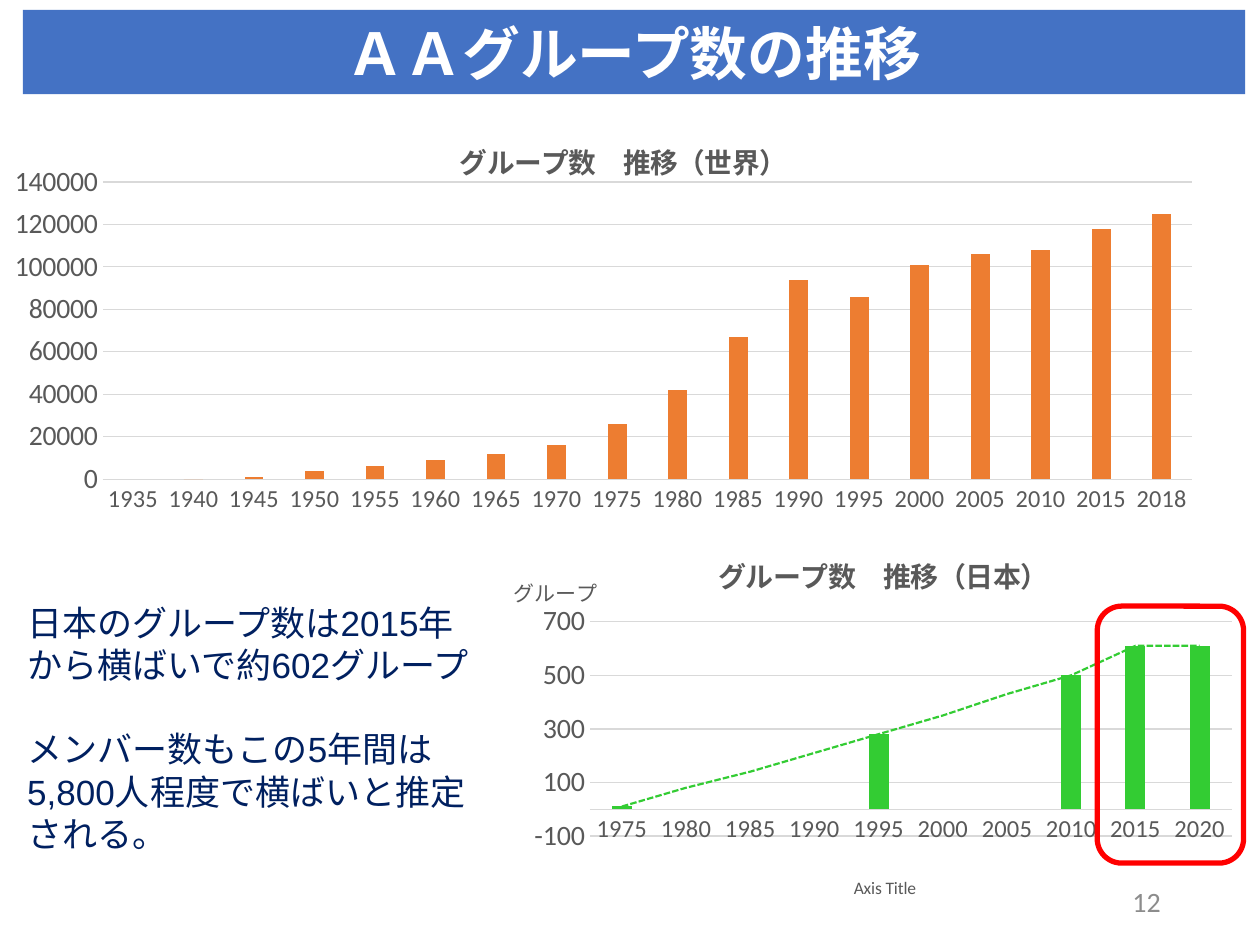
from dataclasses import dataclass

from lxml.etree import SubElement
from pptx import Presentation
from pptx.chart.data import CategoryChartData
from pptx.dml.color import RGBColor
from pptx.enum.chart import XL_CHART_TYPE as ChartType, XL_MARKER_STYLE as Marker, XL_TICK_MARK as Tick
from pptx.enum.dml import MSO_LINE as Dash
from pptx.enum.shapes import MSO_SHAPE as Shape
from pptx.enum.text import MSO_ANCHOR as Anchor, PP_ALIGN as Align
from pptx.oxml import parse_xml
from pptx.oxml.ns import nsdecls, qn
from pptx.util import Cm, Pt


@dataclass(frozen=True)
class Theme:
    latin: str = "Arial"
    body: str = "Calibri"
    banner: str = "4472C4"
    white: str = "FFFFFF"
    navy: str = "002060"
    grey: str = "595959"
    pale: str = "D9D9D9"
    number: str = "8C8C8C"
    orange: str = "ED7D31"
    green: str = "33CC33"
    red: str = "FF0000"
    heading_size: int = 33
    body_size: int = 20
    title_size: int = 16
    category_size: int = 14
    unit_size: int = 12
    small_size: int = 10


THEME = Theme()

HEADING = "ＡＡグループ数の推移"
PAGE_NUMBER = "12"
# Each span is (text, font).
COMMENTS = [
    [("日本のグループ数は", THEME.body), ("2015", THEME.latin), ("年から横ばいで約", THEME.body),
     ("602", THEME.latin), ("グループ", THEME.body)],
    [("メンバー数もこの", THEME.body), ("5年", THEME.latin), ("間は", THEME.body),
     ("5,800人", THEME.latin), ("程度で横ばいと推定される。", THEME.body)],
]
# Layout fractions are (left, top) for titles and (left, top, width, height) for plots.
WORLD = {
    "title": "グループ数　推移（世界）", "title_at": (0.36, 0.05),
    "box": (0.3, 2.26, 24.16, 8.64), "plot": (0.063, 0.163, 0.919, 0.694),
    "years": [*range(1935, 2016, 5), 2018],
    "groups": [None, 0, 1000, 4000, 6000, 9000, 12000, 16000, 26000, 42000, 67000,
               94000, 86000, 101000, 106000, 108000, 118000, 125000],
    "color": THEME.orange, "scale": (0, 140000, 20000),
}
JAPAN = {
    "title": "グループ数　推移（日本）", "title_at": (0.28, 0.06),
    "box": (10.21, 10.54, 14.86, 8.31), "plot": (0.113, 0.24, 0.871, 0.52),
    "years": range(1975, 2021, 5),
    "groups": [10, None, None, None, 280, None, None, 500, 610, 610],
    "trend": [10, 80, 140, 210, 280, 350, 430, 500, 610, 610],
    "color": THEME.green, "scale": (-100, 700, 200),
}
UNIT, UNIT_AT = "グループ", (0.005, 0.115)
YEAR_TITLE, YEAR_TITLE_AT = "Axis Title", (0.467, 0.85)


def rgb(color):
    return RGBColor.from_string(color)


def set_font(font, size, color, name=THEME.body, bold=False):
    font.size, font.name, font.bold = Pt(size), name, bold
    font.color.rgb = rgb(color)


def add_span(para, text, size, color, name=THEME.body, bold=False):
    span = para.add_run()
    span.text = text
    set_font(span.font, size, color, name, bold)


def add_box(page, box):
    frame = page.shapes.add_textbox(*map(Cm, box)).text_frame
    frame.word_wrap = True
    return frame


def place(parent, fractions, index, inner=False):
    """Give a chart part a manual layout, as fractions of the chart."""
    for old in parent.findall(qn("c:layout")):
        parent.remove(old)
    layout = parse_xml(f"<c:layout {nsdecls('c')}/>")
    manual = SubElement(layout, qn("c:manualLayout"))
    settings = [("layoutTarget", "inner")] if inner else []
    settings += [("xMode", "edge"), ("yMode", "edge"), *zip("xywh", fractions)]
    for tag, value in settings:
        SubElement(manual, qn(f"c:{tag}")).set("val", str(value))
    parent.insert(index, layout)


def set_title(title, text, size, at, bold=False):
    frame = title.text_frame
    add_span(frame.paragraphs[0], text, size, THEME.grey, bold=bold)
    body = frame._txBody.bodyPr
    body.set("rot", "0")
    body.set("vert", "horz")
    place(title._element, at, 1)


def style_axis(axis, size):
    axis.major_tick_mark = axis.minor_tick_mark = Tick.NONE
    set_font(axis.tick_labels.font, size, THEME.grey)


def add_column_chart(page, content):
    data = CategoryChartData()
    data.categories = [str(year) for year in content["years"]]
    data.add_series("Series 1", content["groups"])
    if "trend" in content:
        data.add_series("Series 2", content["trend"])
    chart = page.shapes.add_chart(
        ChartType.COLUMN_CLUSTERED, *map(Cm, content["box"]), data).chart
    chart.has_legend = False
    chart.font.name, chart.font.size = THEME.body, Pt(THEME.small_size)
    set_title(chart.chart_title, content["title"], THEME.title_size, content["title_at"], True)
    place(chart._chartSpace.chart.plotArea, content["plot"], 0, inner=True)

    years, values = chart.category_axis, chart.value_axis
    style_axis(years, THEME.category_size)
    years.format.line.color.rgb = rgb(THEME.pale)
    years.format.line.width = Pt(0.75)
    style_axis(values, THEME.title_size)
    values.format.line.fill.background()
    values.minimum_scale, values.maximum_scale, values.major_unit = content["scale"]
    grid = values.major_gridlines.format.line
    grid.color.rgb, grid.width = rgb(THEME.pale), Pt(0.75)

    columns = chart.plots[0]
    columns.vary_by_categories = False
    columns.gap_width, columns.overlap = 219, -27
    fill = columns.series[0].format.fill
    fill.solid()
    fill.fore_color.rgb = rgb(content["color"])
    if "trend" in content:
        add_trend_line(chart, content["color"])
    return chart


def add_trend_line(chart, color):
    """Move the second column series to a line plot on the same axes."""
    columns = chart.plots[0]._element
    series = columns.findall(qn("c:ser"))[1]
    for invert in series.findall(qn("c:invertIfNegative")):
        series.remove(invert)
    lines = parse_xml(f'<c:lineChart {nsdecls("c")}><c:grouping val="standard"/>'
                      '<c:varyColors val="0"/></c:lineChart>')
    lines.append(series)
    SubElement(lines, qn("c:marker")).set("val", "1")
    for axis in columns.findall(qn("c:axId")):
        SubElement(lines, qn("c:axId")).set("val", axis.get("val"))
    columns.addnext(lines)
    trend = chart.plots[1].series[0]
    trend.smooth = False
    trend.marker.style = Marker.NONE
    line = trend.format.line
    line.color.rgb, line.width, line.dash_style = rgb(color), Pt(1.25), Dash.SQUARE_DOT


def main():
    deck = Presentation()
    deck.slide_width, deck.slide_height = Cm(25.4), Cm(19.05)
    page = deck.slides.add_slide(deck.slide_layouts[6])

    add_column_chart(page, WORLD)

    banner = page.shapes.add_shape(Shape.RECTANGLE, *map(Cm, (0.46, 0.2, 24.64, 1.7)))
    banner.shadow.inherit = False
    banner.fill.solid()
    banner.fill.fore_color.rgb = rgb(THEME.banner)
    banner.line.fill.background()
    banner.text_frame.vertical_anchor = Anchor.BOTTOM
    para = banner.text_frame.paragraphs[0]
    para.alignment, para.line_spacing = Align.CENTER, 0.9
    add_span(para, HEADING, THEME.heading_size, THEME.white, THEME.latin, bold=True)

    frame = add_box(page, (0.3, 12.01, 9.75, 5.38))
    for index, spans in enumerate(COMMENTS):
        para = frame.add_paragraph() if index else frame.paragraphs[0]
        para.space_before = Pt(24 if index else 0)
        for text, name in spans:
            add_span(para, text, THEME.body_size, THEME.navy, name)

    japan = add_column_chart(page, JAPAN)
    set_title(japan.value_axis.axis_title, UNIT, THEME.unit_size, UNIT_AT)
    set_title(japan.category_axis.axis_title, YEAR_TITLE, THEME.small_size, YEAR_TITLE_AT)

    highlight = page.shapes.add_shape(Shape.ROUNDED_RECTANGLE, *map(Cm, (22.12, 12.22, 2.95, 5.18)))
    highlight.shadow.inherit = False
    highlight.fill.background()
    highlight.line.color.rgb, highlight.line.width = rgb(THEME.red), Pt(3)

    frame = add_box(page, (17.93, 17.65, 5.72, 1.02))
    frame.vertical_anchor = Anchor.MIDDLE
    frame.paragraphs[0].alignment = Align.RIGHT
    add_span(frame.paragraphs[0], PAGE_NUMBER, THEME.title_size, THEME.number)

    deck.save("out.pptx")


if __name__ == "__main__":
    main()
